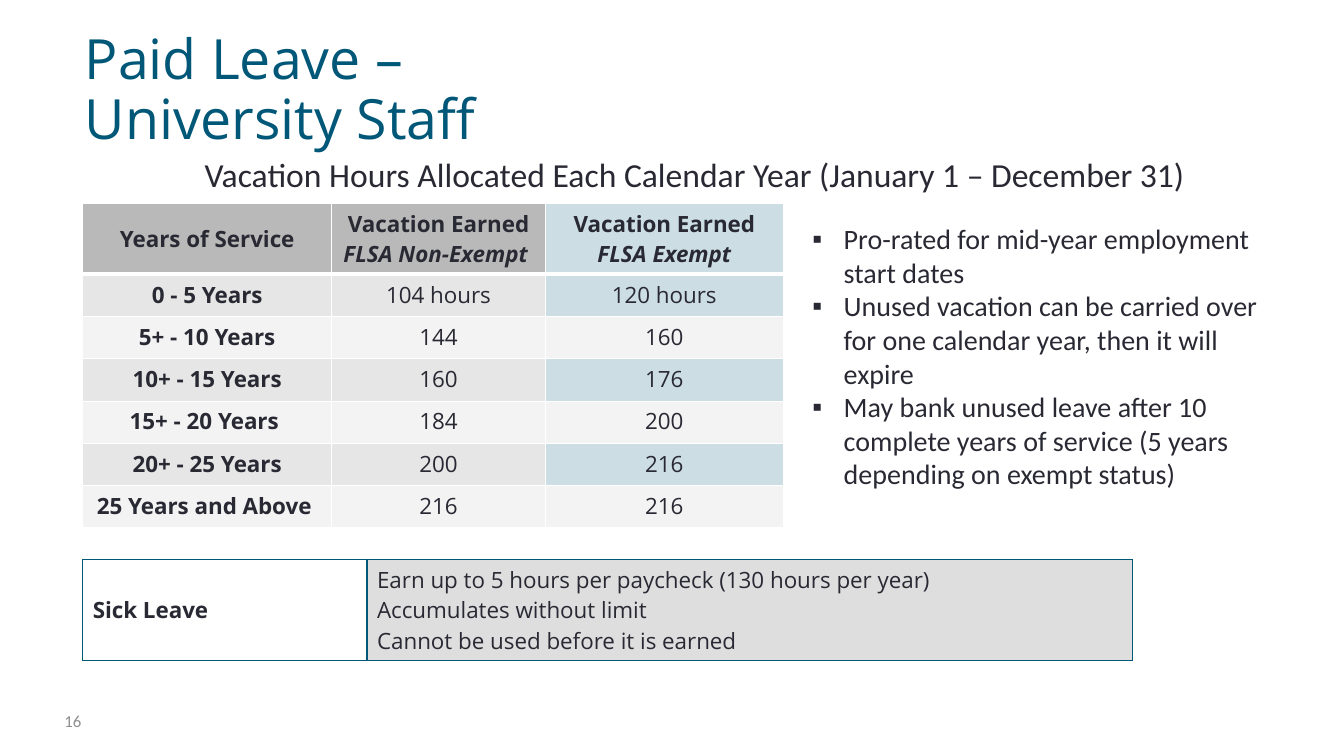
import pptx
import pptx.util
import pptx.dml.color
import pptx.enum.text
import pptx.oxml
import pptx.oxml.ns
from lxml import etree

Inches, Pt = pptx.util.Inches, pptx.util.Pt
ALIGN, ANCHOR = pptx.enum.text.PP_ALIGN, pptx.enum.text.MSO_ANCHOR
qn = pptx.oxml.ns.qn

# Content
TITLE = "Paid Leave – \vUniversity Staff"
LEAD = "Vacation Hours Allocated Each Calendar Year (January 1 – December 31)"
HEADS = [["Years of Service"],
         ["Vacation Earned", "FLSA Non-Exempt "],
         ["Vacation Earned", "FLSA Exempt"]]
HOURS = [
    ("0 - 5 Years", "104 hours", "120 hours"),
    ("5+ - 10 Years", "144", "160"),
    ("10+ - 15 Years", "160", "176"),
    ("15+ - 20 Years ", "184", "200"),
    ("20+ - 25 Years", "200", "216"),
    ("25 Years and Above ", "216", "216"),
]
NOTES = [
    "Pro-rated for mid-year employment start dates",
    "Unused vacation can be carried over for one calendar year, then it will expire",
    "May bank unused leave after 10 complete years of service "
    "(5 years depending on exempt status)",
]
SICK = [["Sick Leave"],
        ["Earn up to 5 hours per paycheck (130 hours per year)",
         "Accumulates without limit",
         "Cannot be used before it is earned"]]
PAGE = "16"

COLORS = {"teal": "005777", "ink": "292934", "page": "8E8E90", "white": "FFFFFF",
          "head": "B9B9B9", "blue": "CCDDE4", "odd": "E6E6E6", "even": "F3F3F3",
          "sick": "DEDEDE"}


def color(name):
    return pptx.dml.color.RGBColor.from_string(COLORS[name])


def style(para, size, face, ink="ink", bold=False, italic=False):
    font = para.font
    font.size, font.name = Pt(size), face
    font.bold, font.italic = bold, italic
    font.color.rgb = color(ink)


def add_text(slide, box, lines, size, ink="ink", anchor=ANCHOR.TOP, bullet=None):
    frame = slide.shapes.add_textbox(*map(Inches, box)).text_frame
    frame.word_wrap = True
    frame.vertical_anchor = anchor
    frame.text = "\n".join(lines)
    for para in frame.paragraphs:
        if bullet:
            props = para._p.get_or_add_pPr()
            props.set("marL", str(Inches(0.31)))
            props.set("indent", str(-Inches(0.31)))
            etree.SubElement(props, qn("a:buFont"), typeface="Arial")
            etree.SubElement(props, qn("a:buChar"), char=bullet)
        style(para, size, "Calibri", ink)


def add_grid(slide, left, top, cols, rows):
    frame = slide.shapes.add_table(len(rows), len(cols), Inches(left), Inches(top),
                                   Inches(sum(cols)), Inches(sum(rows)))
    grid = frame.table
    grid.first_row = grid.horz_banding = False
    for col, width in zip(grid.columns, cols):
        col.width = Inches(width)
    for row, height in zip(grid.rows, rows):
        row.height = Inches(height)
    return grid


def fill_cell(cell, lines, fill, line, align, bold, anchor=ANCHOR.TOP, top=1, base=1):
    cell.text = "\n".join(lines)
    cell.vertical_anchor = anchor
    for para in cell.text_frame.paragraphs:
        para.alignment = align
        style(para, 16, "Open Sans", bold=bold)
    props = cell._tc.get_or_add_tcPr()
    for side, width in (("L", 1), ("R", 1), ("T", top), ("B", base)):
        edge = etree.SubElement(props, qn("a:ln" + side), w=str(Pt(width)))
        solid = etree.SubElement(edge, qn("a:solidFill"))
        etree.SubElement(solid, qn("a:srgbClr"), val=COLORS[line])
    if fill:
        cell.fill.solid()
        cell.fill.fore_color.rgb = color(fill)
    else:
        cell.fill.background()


def add_title(slide):
    title = slide.shapes.title
    title.left, title.top = Inches(0.74), Inches(0.3)
    title.width, title.height = Inches(11.94), Inches(1.25)
    frame = title.text_frame
    frame.text = TITLE
    frame.auto_size = pptx.enum.text.MSO_AUTO_SIZE.NONE
    frame.vertical_anchor = ANCHOR.BOTTOM
    para = frame.paragraphs[0]
    para.alignment = ALIGN.LEFT
    para.line_spacing = 0.9
    style(para, 39.6, "Open Sans", "teal")


def add_hours(slide):
    grid = add_grid(slide, 0.82, 2.02, [2.47, 2.12, 2.36], [0.7] + [0.42] * len(HOURS))
    for c, lines in enumerate(HEADS):
        cell = grid.cell(0, c)
        fill_cell(cell, lines, "blue" if c == 2 else "head", "white", ALIGN.CENTER,
                  True, ANCHOR.MIDDLE if c == 0 else ANCHOR.TOP, base=3)
        for para in cell.text_frame.paragraphs[1:]:
            para.font.italic = True
    for r, row in enumerate(HOURS, 1):
        for c, text in enumerate(row):
            fill = "even" if r % 2 == 0 else "blue" if c == 2 else "odd"
            fill_cell(grid.cell(r, c), [text], fill, "white", ALIGN.CENTER, c == 0,
                      top=3 if r == 1 else 1)


def add_sick(slide):
    grid = add_grid(slide, 0.82, 5.55, [2.82, 7.59], [1])
    for c, lines in enumerate(SICK):
        fill_cell(grid.cell(0, c), lines, "sick" if c else None, "teal", ALIGN.LEFT,
                  c == 0, ANCHOR.MIDDLE)


def main():
    deck = pptx.Presentation()
    deck.slide_width, deck.slide_height = Inches(13.33), Inches(7.5)
    slide = deck.slides.add_slide(deck.slide_layouts[5])
    add_title(slide)
    add_text(slide, (0.54, 6.95, 0.56, 0.4), [PAGE], 12, "page", ANCHOR.MIDDLE)
    add_sick(slide)
    add_hours(slide)
    add_text(slide, (1.93, 1.48, 10.19, 0.5), [LEAD], 24)
    add_text(slide, (7.96, 2.15, 4.89, 2.79), NOTES, 20, bullet="▪")
    deck.save("out.pptx")


if __name__ == "__main__":
    main()
